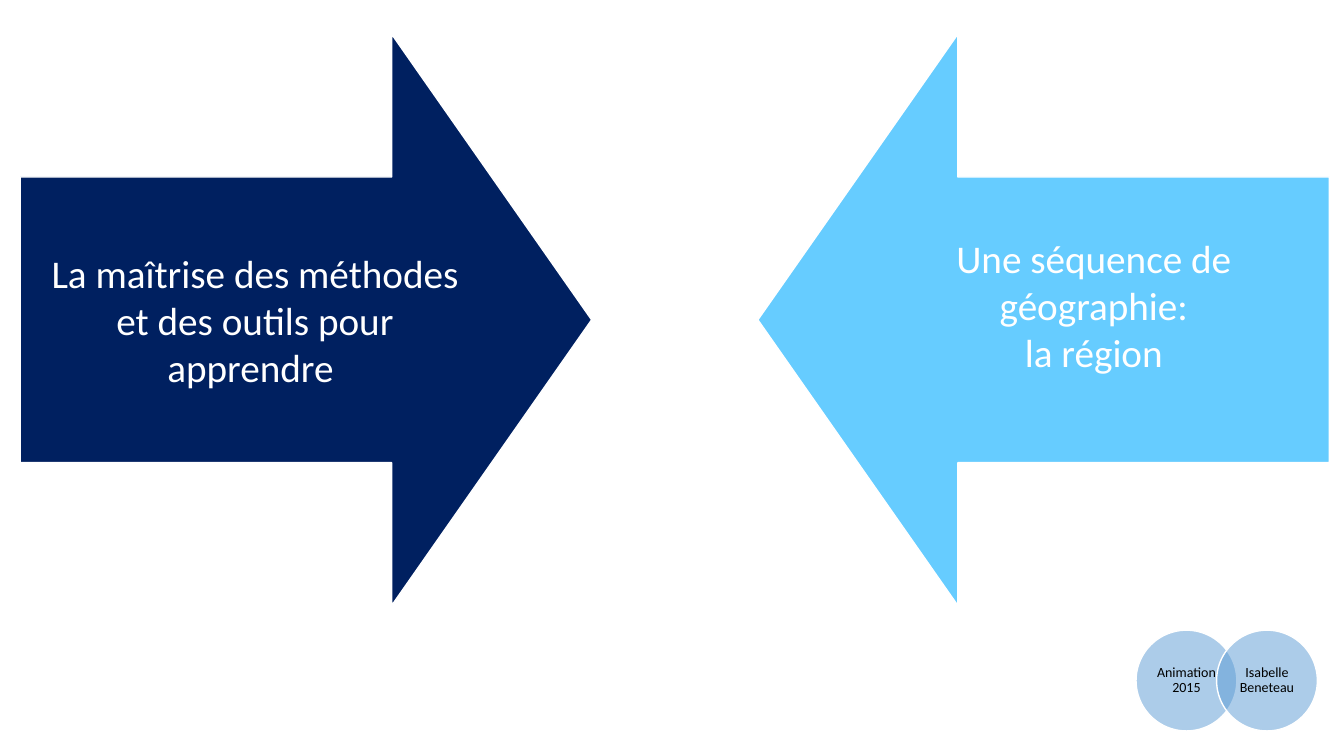
import dataclasses

import lxml.etree
import pptx
import pptx.dml.color
import pptx.enum.shapes
import pptx.enum.text
import pptx.oxml.ns
import pptx.slide
import pptx.util

Cm = pptx.util.Cm
Pt = pptx.util.Pt
Shapes = pptx.enum.shapes.MSO_SHAPE

WHITE = "FFFFFF"
BLACK = "000000"
NAVY = "002060"
SKY_BLUE = "66CCFF"
CIRCLE_BLUE = "5B9BD5"


@dataclasses.dataclass(frozen=True)
class Box:
    left: float
    top: float
    width: float
    height: float

    def lengths(self) -> tuple[int, ...]:
        return tuple(Cm(value) for value in dataclasses.astuple(self))


@dataclasses.dataclass(frozen=True)
class Figure:
    kind: Shapes
    box: Box
    color: str
    adjustments: tuple[float, ...] = ()
    opacity: int = 100


@dataclasses.dataclass(frozen=True)
class Label:
    lines: tuple[str, ...]
    box: Box
    size: int
    color: str
    margin_side: float
    margin_top: float
    margin_bottom: float
    line_spacing: float = 1.0


def rgb(color: str) -> pptx.dml.color.RGBColor:
    return pptx.dml.color.RGBColor.from_string(color)


def apply_format(target: object, values: dict[str, object]) -> None:
    for name, value in values.items():
        setattr(target, name, value)


def draw_figure(slide: pptx.slide.Slide, figure: Figure) -> None:
    shape = slide.shapes.add_shape(figure.kind, *figure.box.lengths())
    shape.shadow.inherit = False
    for index, value in enumerate(figure.adjustments):
        shape.adjustments[index] = value
    shape.fill.solid()
    shape.fill.fore_color.rgb = rgb(figure.color)
    if figure.opacity < 100:
        qn = pptx.oxml.ns.qn
        fill_color = shape.element.spPr.find(qn("a:solidFill")).find(qn("a:srgbClr"))
        alpha = lxml.etree.SubElement(fill_color, qn("a:alpha"))
        alpha.set("val", str(figure.opacity * 1000))
    shape.line.color.rgb = rgb(WHITE)
    shape.line.width = Pt(1)


def draw_label(slide: pptx.slide.Slide, label: Label) -> None:
    frame = slide.shapes.add_textbox(*label.box.lengths()).text_frame
    apply_format(frame, {
        "word_wrap": True,
        "auto_size": pptx.enum.text.MSO_AUTO_SIZE.NONE,
        "vertical_anchor": pptx.enum.text.MSO_ANCHOR.MIDDLE,
        "margin_left": Cm(label.margin_side),
        "margin_right": Cm(label.margin_side),
        "margin_top": Cm(label.margin_top),
        "margin_bottom": Cm(label.margin_bottom),
        "text": "\n".join(label.lines),
    })
    for paragraph in frame.paragraphs:
        apply_format(paragraph, {
            "alignment": pptx.enum.text.PP_ALIGN.CENTER,
            "line_spacing": label.line_spacing,
        })
        for run in paragraph.runs:
            apply_format(run.font, {"name": "Calibri", "size": Pt(label.size)})
            run.font.color.rgb = rgb(label.color)


def arrow(kind: Shapes, left: float, color: str) -> Figure:
    return Figure(kind, Box(left, 0.86, 14.4, 14.4), color, (0.5, 0.35))


def arrow_label(lines: tuple[str, ...], left: float, margin_bottom: float) -> Label:
    box = Box(left, 4.47, 11.89, 7.19)
    return Label(lines, box, 28, WHITE, 0.56, 0.56, margin_bottom)


def circle(left: float) -> Figure:
    return Figure(Shapes.OVAL, Box(left, 15.88, 2.54, 2.54), CIRCLE_BLUE, opacity=50)


def circle_label(text: str, left: float) -> Label:
    box = Box(left + 0.37, 16.25, 1.8, 1.8)
    return Label((text,), box, 10, BLACK, 0.13, 0.03, 0.03, 0.9)


def main() -> None:
    presentation = pptx.Presentation()
    presentation.slide_width = Cm(33.87)
    presentation.slide_height = Cm(19.05)
    slide = presentation.slides.add_slide(presentation.slide_layouts[6])

    methods = "La maîtrise des méthodes et des outils pour apprendre "
    sequence = ("Une séquence de géographie:", "la région")
    pairs = [
        (arrow(Shapes.RIGHT_ARROW, 0.51, NAVY), arrow_label((methods,), 0.48, 0.56)),
        (arrow(Shapes.LEFT_ARROW, 19.1, SKY_BLUE), arrow_label(sequence, 21.62, 1.32)),
    ]
    for index, text in enumerate(("Animation 2015", "Isabelle Beneteau")):
        left = 28.63 + 2.03 * index
        pairs.append((circle(left), circle_label(text, left)))

    for figure, label in pairs:
        draw_figure(slide, figure)
        draw_label(slide, label)
    presentation.save("out.pptx")


if __name__ == "__main__":
    main()
